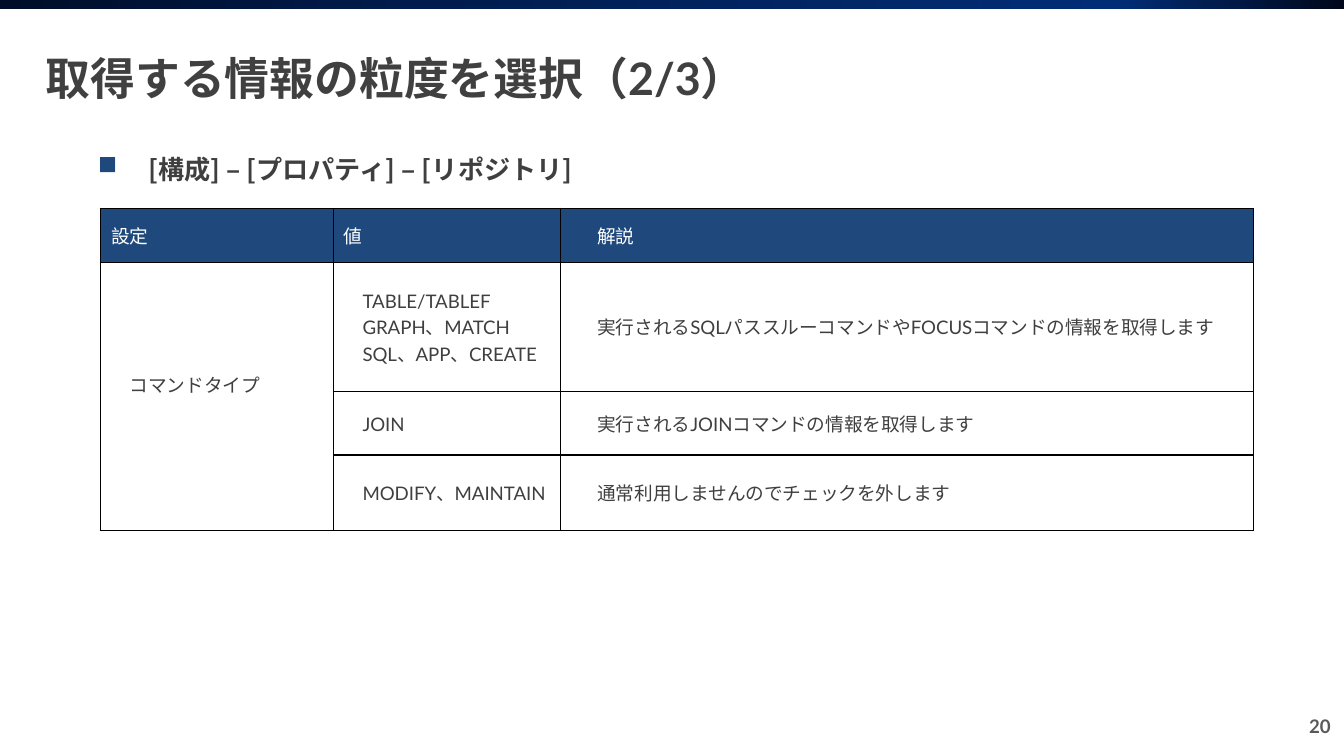
from copy import deepcopy

from lxml import etree
from pptx import Presentation
from pptx import util as u
from pptx.dml.color import RGBColor
from pptx.enum import shapes, text
from pptx.oxml import ns

LATIN, JAPANESE = "Lato", "Noto Sans CJK JP"
NAVY, WHITE, BLACK, DARK = "1F497D", "FFFFFF", "000000", "3F3F3F"


def color(hex_value):
    return RGBColor.from_string(hex_value)


def format_text(text_frame, size, hex_value, bold=False, latin=LATIN):
    for paragraph in text_frame.paragraphs:
        for run in paragraph.runs:
            run.font.size = u.Pt(size)
            run.font.bold = bold
            run.font.name = latin
            run.font.color.rgb = color(hex_value)
            east_asian = etree.Element(ns.qn("a:ea"), typeface=JAPANESE)
            run.font._element.find(ns.qn("a:latin")).addnext(east_asian)


presentation = Presentation()
presentation.slide_width = u.Cm(25.4)
presentation.slide_height = u.Cm(14.29)
slide = presentation.slides.add_slide(presentation.slide_layouts[5])

# Gradient band along the top edge
band = slide.shapes.add_shape(
    shapes.MSO_SHAPE.RECTANGLE, 0, 0, presentation.slide_width, u.Cm(0.18))
band.shadow.inherit = False
band.line.fill.background()
band.fill.gradient()
band.fill.gradient_angle = 0
stop_list = band._element.spPr.find(".//" + ns.qn("a:gsLst"))
for _ in range(2):
    stop_list.append(deepcopy(stop_list[0]))
band_stops = [(0, "000D28"), (0.32, "001C4E"), (0.83, "012D76"), (1, "00071A")]
for stop, (position, hex_value) in zip(band.fill.gradient_stops, band_stops):
    stop.position = position
    stop.color.rgb = color(hex_value)

# Title
title = slide.shapes.title
title.left, title.top = u.Cm(0.61), u.Cm(0.58)
title.width, title.height = u.Cm(24.2), u.Cm(1.78)
title.text_frame.text = "取得する情報の粒度を選択（2/3）"
title.text_frame.vertical_anchor = text.MSO_ANCHOR.MIDDLE
title.text_frame.paragraphs[0].alignment = text.PP_ALIGN.LEFT
format_text(title.text_frame, 24, "404040", bold=True)

# Bulleted heading
heading = slide.shapes.add_textbox(u.Cm(1.6), u.Cm(2.77), u.Cm(22.86), u.Cm(10.19))
heading.text_frame.word_wrap = True
heading.text_frame.text = "[構成] – [プロパティ] – [リポジトリ]"
format_text(heading.text_frame, 14, DARK, bold=True, latin=JAPANESE)
properties = heading.text_frame.paragraphs[0]._p.get_or_add_pPr()
properties.set("marL", str(u.Cm(0.95)))
properties.set("indent", str(u.Cm(-0.95)))
bullet_color = etree.SubElement(properties, ns.qn("a:buClr"))
etree.SubElement(bullet_color, ns.qn("a:srgbClr"), val=NAVY)
etree.SubElement(properties, ns.qn("a:buChar"), char="■")

# Settings table: the narrow third column is a spacer before the explanation
rows = [
    ["設定", "値", "", "解説"],
    ["　コマンドタイプ", "　TABLE/TABLEF\v　GRAPH、MATCH\n　SQL、APP、CREATE", "",
     "実行されるSQLパススルーコマンドやFOCUSコマンドの情報を取得します"],
    ["", "　JOIN", "", "実行されるJOINコマンドの情報を取得します"],
    ["", "　MODIFY、MAINTAIN", "", "通常利用しませんのでチェックを外します"],
]
column_widths = [4.4, 4.29, 0.5, 12.6]
row_heights = [1.02, 2.44, 1.2, 1.43]
SPACER = 2

frame = slide.shapes.add_table(
    len(rows), len(column_widths), u.Cm(1.9), u.Cm(3.94),
    u.Cm(sum(column_widths)), u.Cm(sum(row_heights)))
table = frame.table
table.first_row = table.horz_banding = False
for column, width in zip(table.columns, column_widths):
    column.width = u.Cm(width)
for row, height in zip(table.rows, row_heights):
    row.height = u.Cm(height)

for row_index, row in enumerate(rows):
    for column_index, content in enumerate(row):
        cell = table.cell(row_index, column_index)
        cell.text_frame.text = content
        cell.vertical_anchor = text.MSO_ANCHOR.MIDDLE
        cell.margin_left = cell.margin_right = u.Cm(0.2)
        cell.margin_top = cell.margin_bottom = u.Cm(0.25)
        format_text(cell.text_frame, 10, DARK if row_index else WHITE)
        if not content:
            cell.text_frame.paragraphs[0].font.size = u.Pt(10)
        cell.fill.solid()
        cell.fill.fore_color.rgb = color(WHITE if row_index else NAVY)

        # Black grid, with no line between the spacer and the explanation
        hidden = {SPACER: "R", SPACER + 1: "L"}.get(column_index)
        for index, side in enumerate("LRTB"):
            line = etree.Element(ns.qn("a:ln" + side), w=str(u.Pt(1)))
            if side == hidden:
                etree.SubElement(line, ns.qn("a:noFill"))
            else:
                solid = etree.SubElement(line, ns.qn("a:solidFill"))
                etree.SubElement(solid, ns.qn("a:srgbClr"), val=BLACK)
            cell._tc.get_or_add_tcPr().insert(index, line)

# The command type covers all three value rows and sits slightly above the middle
command_type = table.cell(1, 0)
command_type.merge(table.cell(3, 0))
command_type.margin_bottom = u.Cm(0.7)

# Page number
page_number = slide.shapes.add_textbox(u.Cm(23.88), u.Cm(13.39), u.Cm(1.52), u.Cm(0.76))
page_number.text_frame.word_wrap = True
page_number.text_frame.text = "20"
page_number.text_frame.paragraphs[0].alignment = text.PP_ALIGN.RIGHT
format_text(page_number.text_frame, 10, "595959", bold=True)

presentation.save("out.pptx")
